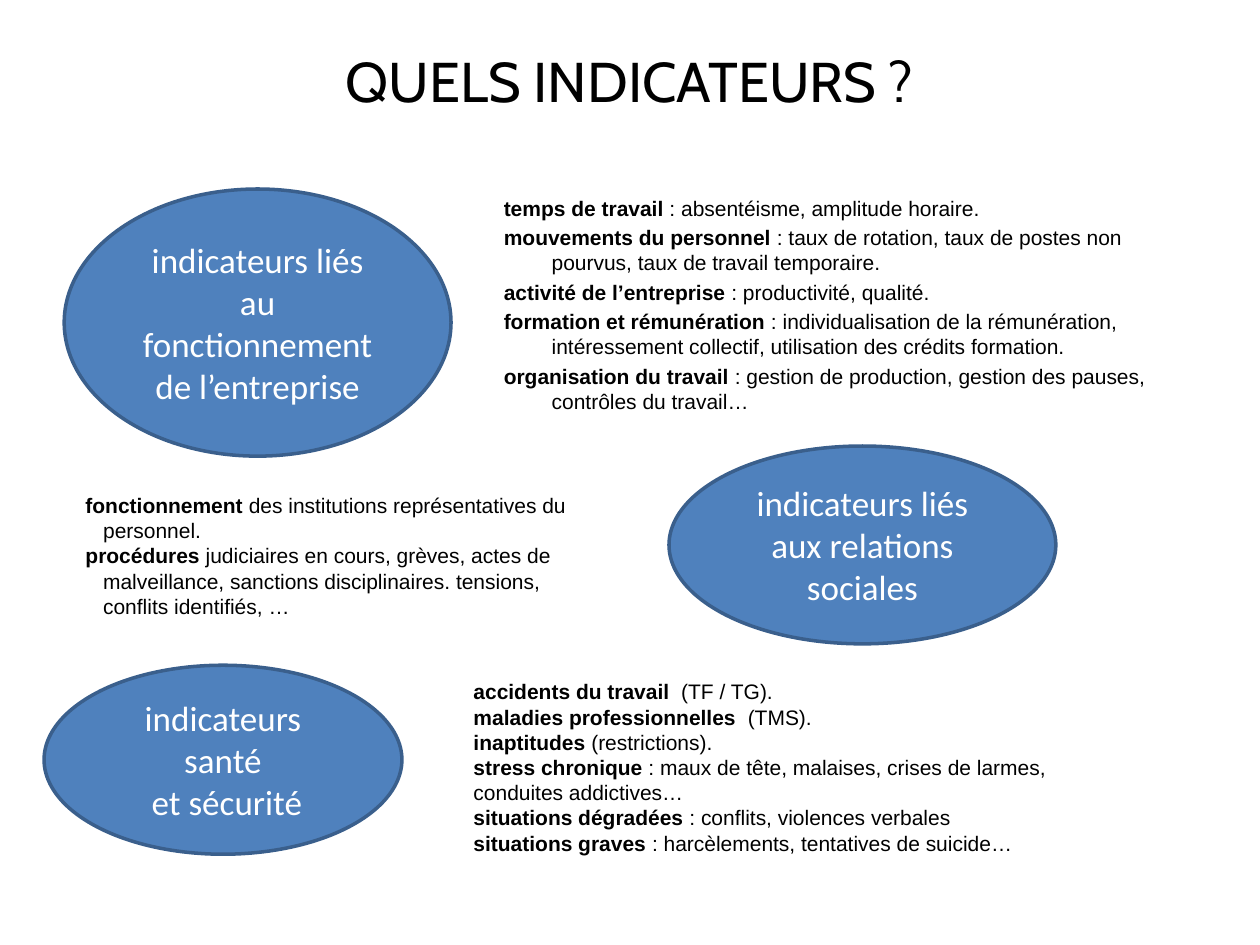
from dataclasses import dataclass

from pptx import Presentation
from pptx.dml.color import RGBColor
from pptx.enum.shapes import MSO_SHAPE
from pptx.enum.text import MSO_ANCHOR, PP_ALIGN
from pptx.util import Inches, Pt

ELLIPSE = MSO_SHAPE.OVAL
MIDDLE, TOP = MSO_ANCHOR.MIDDLE, MSO_ANCHOR.TOP
CENTER, LEFT = PP_ALIGN.CENTER, PP_ALIGN.LEFT


@dataclass(frozen=True)
class Theme:
    ink: RGBColor = RGBColor(0x00, 0x00, 0x00)
    paper: RGBColor = RGBColor(0xFF, 0xFF, 0xFF)
    blue: RGBColor = RGBColor(0x4F, 0x81, 0xBD)
    outline: RGBColor = RGBColor(0x3A, 0x5F, 0x8C)
    title_font: str = "Cabin"
    theme_font: str = "Calibri"
    detail_font: str = "Arial"
    title_size: int = 32
    theme_size: int = 20
    detail_size: int = 12
    outline_width: int = 2


class SlideBuilder:
    def __init__(self, slide, theme):
        self.slide = slide
        self.theme = theme

    def add_run(self, paragraph, text, font, size, color, bold=False):
        run = paragraph.add_run()
        run.text = text
        run.font.name = font
        run.font.size = Pt(size)
        run.font.color.rgb = color
        run.font.bold = bold

    def add_paragraph(self, frame, position, alignment):
        paragraph = frame.add_paragraph() if position else frame.paragraphs[0]
        paragraph.alignment = alignment
        return paragraph

    def text_frame(self, box, anchor):
        shape = self.slide.shapes.add_textbox(*map(Inches, box))
        frame = shape.text_frame
        frame.word_wrap = True
        frame.vertical_anchor = anchor
        return frame

    def title(self, text, box):
        theme = self.theme
        paragraph = self.add_paragraph(self.text_frame(box, MIDDLE), 0, CENTER)
        self.add_run(paragraph, text, theme.title_font, theme.title_size, theme.ink)

    def ellipse(self, lines, box):
        theme = self.theme
        shape = self.slide.shapes.add_shape(ELLIPSE, *map(Inches, box))
        shape.shadow.inherit = False
        shape.fill.solid()
        shape.fill.fore_color.rgb = theme.blue
        shape.line.color.rgb = theme.outline
        shape.line.width = Pt(theme.outline_width)
        frame = shape.text_frame
        frame.word_wrap = True
        frame.vertical_anchor = MIDDLE
        for position, line in enumerate(lines):
            paragraph = self.add_paragraph(frame, position, CENTER)
            self.add_run(paragraph, line, theme.theme_font, theme.theme_size, theme.paper)

    def details(self, items, box, margin=0, indent=0, space_before=0):
        theme = self.theme
        frame = self.text_frame(box, TOP)
        for position, (term, explanation) in enumerate(items):
            paragraph = self.add_paragraph(frame, position, LEFT)
            paragraph.space_before = Pt(space_before)
            properties = paragraph._p.get_or_add_pPr()
            properties.set("marL", str(Inches(margin)))
            properties.set("indent", str(Inches(indent)))
            for text, bold in ((term, True), (explanation, False)):
                self.add_run(paragraph, text, theme.detail_font, theme.detail_size, theme.ink, bold)


COMPANY_DETAILS = [
    ("temps de travail", " : absentéisme, amplitude horaire."),
    ("mouvements du personnel",
     " : taux de rotation, taux de postes non pourvus, taux de travail temporaire."),
    ("activité de l’entreprise", " : productivité, qualité."),
    ("formation et rémunération",
     " : individualisation de la rémunération, intéressement collectif, "
     "utilisation des crédits formation."),
    ("organisation du travail",
     " : gestion de production, gestion des pauses, contrôles du travail…"),
]
SOCIAL_DETAILS = [
    ("fonctionnement", " des institutions représentatives du personnel."),
    ("procédures",
     " judiciaires en cours, grèves, actes de malveillance, sanctions disciplinaires. "
     "tensions, conflits identifiés, …"),
]
HEALTH_DETAILS = [
    ("accidents du travail", "  (TF / TG)."),
    ("maladies professionnelles  ", "(TMS)."),
    ("inaptitudes ", "(restrictions)."),
    ("stress chronique",
     " : maux de tête, malaises, crises de larmes, conduites addictives…"),
    ("situations dégradées ", ": conflits, violences verbales"),
    ("situations graves", " : harcèlements, tentatives de suicide…"),
]


def main():
    presentation = Presentation()
    presentation.slide_width = Inches(10)
    presentation.slide_height = Inches(7.5)
    slide = presentation.slides.add_slide(presentation.slide_layouts[6])
    builder = SlideBuilder(slide, Theme())

    builder.title("QUELS INDICATEURS ?", (0, 0.05, 10, 1.17))
    builder.details(COMPANY_DETAILS, (3.9, 1.5, 5.68, 1.81),
                    margin=0.38, indent=-0.38, space_before=2.4)
    builder.ellipse(["indicateurs liés au fonctionnement de l’entreprise"],
                    (0.51, 1.5, 3.07, 2.12))
    builder.ellipse(["indicateurs santé", " et sécurité"], (0.35, 5.28, 2.84, 1.5))
    builder.details(HEALTH_DETAILS, (3.66, 5.34, 5, 1.7))
    builder.ellipse(["indicateurs liés aux relations sociales"], (5.31, 3.54, 3.07, 1.57))
    builder.details(SOCIAL_DETAILS, (0.35, 3.86, 4.41, 1.1), margin=0.37, indent=-0.14)

    presentation.save("out.pptx")


if __name__ == "__main__":
    main()
